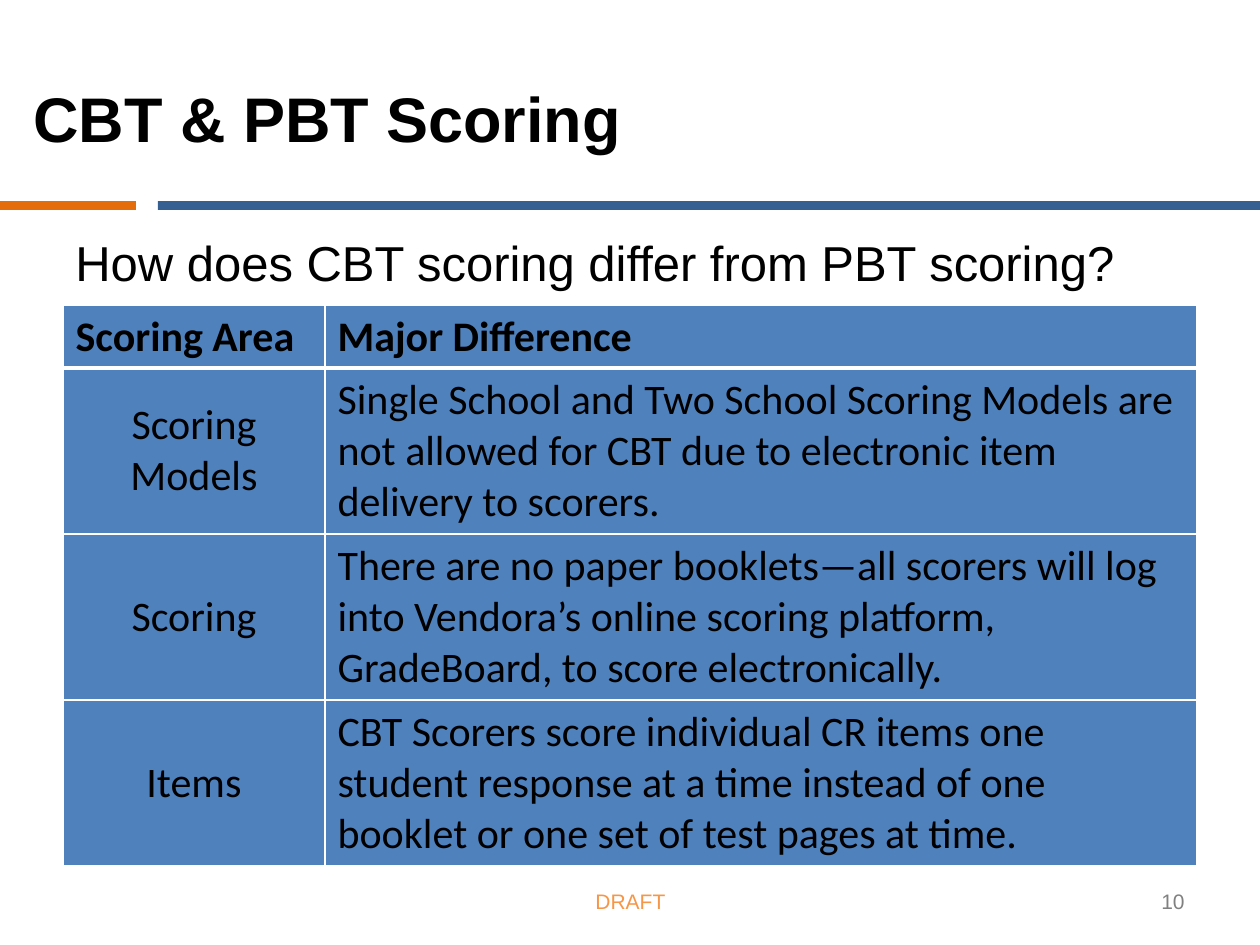
from lxml import etree
from pptx import Presentation
from pptx import util as u
from pptx.dml.color import RGBColor
from pptx.enum import shapes, text
from pptx.oxml.ns import qn

BLACK = RGBColor(0x00, 0x00, 0x00)
GRAY = RGBColor(0x80, 0x80, 0x80)
ORANGE = RGBColor(0xF7, 0x96, 0x46)
DARK_ORANGE = RGBColor(0xE4, 0x6C, 0x0A)
NAVY = RGBColor(0x37, 0x60, 0x92)
BLUE = RGBColor(0x4F, 0x81, 0xBD)
WHITE = RGBColor(0xFF, 0xFF, 0xFF)

TITLE = "CBT & PBT Scoring"
QUESTION = "How does CBT scoring differ from PBT scoring?"
FOOTER, PAGE = "DRAFT", "10"
DIFFERENCES = [
    ("Scoring Area", "Major Difference"),
    ("Scoring Models", "Single School and Two School Scoring Models are not allowed "
     "for CBT due to electronic item delivery to scorers."),
    ("Scoring", "There are no paper booklets—all scorers will log into Vendora’s "
     "online scoring platform, GradeBoard, to score electronically."),
    ("Items", "CBT Scorers score individual CR items one student response at a time "
     "instead of one booklet or one set of test pages at time."),
]

WIDTH, HEIGHT = 1260, 945
RULE_TOP, RULE_HEIGHT = 201, 9
RULES = [(0, 136, DARK_ORANGE), (158, WIDTH - 158, NAVY)]
TABLE_LEFT, TABLE_TOP = 63, 305
COLUMNS = (262, 872)
HEADER_HEIGHT, ROW_HEIGHT = 63, 166

LEFT, CENTER, RIGHT = text.PP_ALIGN.LEFT, text.PP_ALIGN.CENTER, text.PP_ALIGN.RIGHT
TOP, MIDDLE = text.MSO_ANCHOR.TOP, text.MSO_ANCHOR.MIDDLE


def px(n):
    return u.Emu(round(n * u.Inches(10) / WIDTH))


def write(frame, words, size, font="Arial", color=BLACK, bold=False, align=LEFT):
    paragraph = frame.paragraphs[0]
    paragraph.alignment = align
    run = paragraph.add_run()
    run.text = words
    run.font.size = u.Pt(size)
    run.font.name = font
    run.font.bold = bold
    run.font.color.rgb = color


def add_label(slide, box, words, size, anchor=MIDDLE, inset=6, **style):
    frame = slide.shapes.add_textbox(*map(px, box)).text_frame
    frame.word_wrap = True
    frame.vertical_anchor = anchor
    frame.margin_top = px(inset)
    write(frame, words, size, **style)


def add_borders(cell, bottom_width):
    properties = cell._tc.get_or_add_tcPr()
    widths = {"a:lnL": 1, "a:lnR": 1, "a:lnT": 1, "a:lnB": bottom_width}
    for position, (side, width) in enumerate(widths.items()):
        line = etree.Element(qn(side), w=str(u.Pt(width)))
        fill = etree.SubElement(line, qn("a:solidFill"))
        etree.SubElement(fill, qn("a:srgbClr"), val=str(WHITE))
        properties.insert(position, line)


def add_differences(slide):
    heights = [HEADER_HEIGHT] + [ROW_HEIGHT] * (len(DIFFERENCES) - 1)
    box = (TABLE_LEFT, TABLE_TOP, sum(COLUMNS), sum(heights))
    table = slide.shapes.add_table(len(heights), len(COLUMNS), *map(px, box)).table
    for column, width in zip(table.columns, COLUMNS):
        column.width = px(width)
    for r, (row, height) in enumerate(zip(table.rows, heights)):
        row.height = px(height)
        header = r == 0
        for c, cell in enumerate(row.cells):
            area = c == 0 and not header
            cell.fill.solid()
            cell.fill.fore_color.rgb = BLUE
            cell.vertical_anchor = MIDDLE if area else TOP
            write(cell.text_frame, DIFFERENCES[r][c], 24, font="Calibri",
                  bold=header, align=CENTER if area else LEFT)
            add_borders(cell, 3 if header else 1)
            if r == 1:
                top = cell._tc.tcPr.find(qn("a:lnT"))
                top.set("w", str(u.Pt(3)))


def main():
    deck = Presentation()
    deck.slide_width, deck.slide_height = px(WIDTH), px(HEIGHT)
    slide = deck.slides.add_slide(deck.slide_layouts[6])
    for left, width, color in RULES:
        rule = slide.shapes.add_shape(shapes.MSO_SHAPE.RECTANGLE,
                                      *map(px, (left, RULE_TOP, width, RULE_HEIGHT)))
        rule.shadow.inherit = False
        rule.fill.solid()
        rule.fill.fore_color.rgb = color
        rule.line.fill.background()
    add_label(slide, (21, 38, 945, 158), TITLE, 36, bold=True)
    add_label(slide, (63, 220, 1134, 624), QUESTION, 28, anchor=TOP, inset=12)
    add_differences(slide)
    add_label(slide, (431, 876, 399, 50), FOOTER, 12, color=ORANGE, align=CENTER)
    add_label(slide, (903, 876, 294, 50), PAGE, 12, color=GRAY, align=RIGHT)
    deck.save("out.pptx")


if __name__ == "__main__":
    main()
